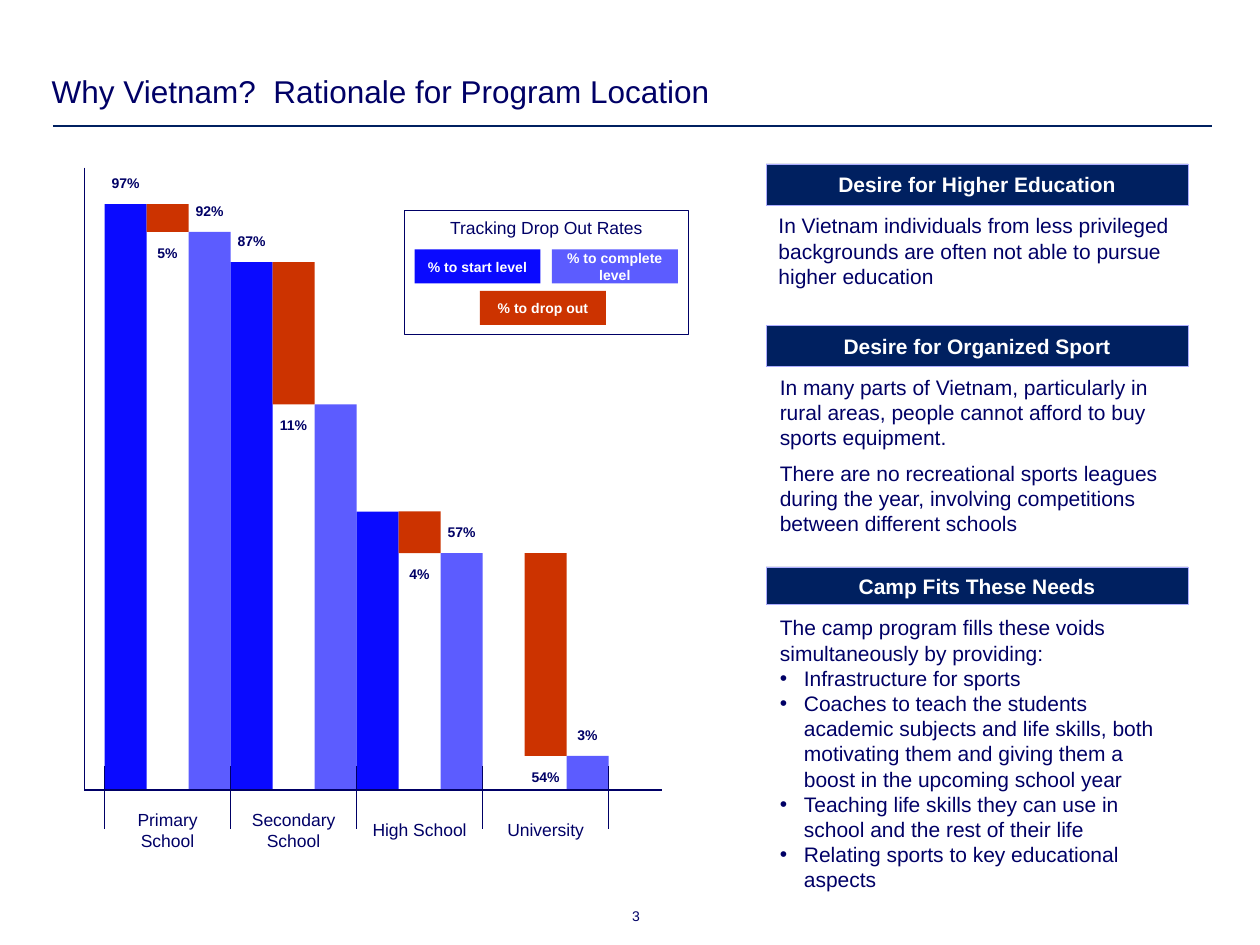
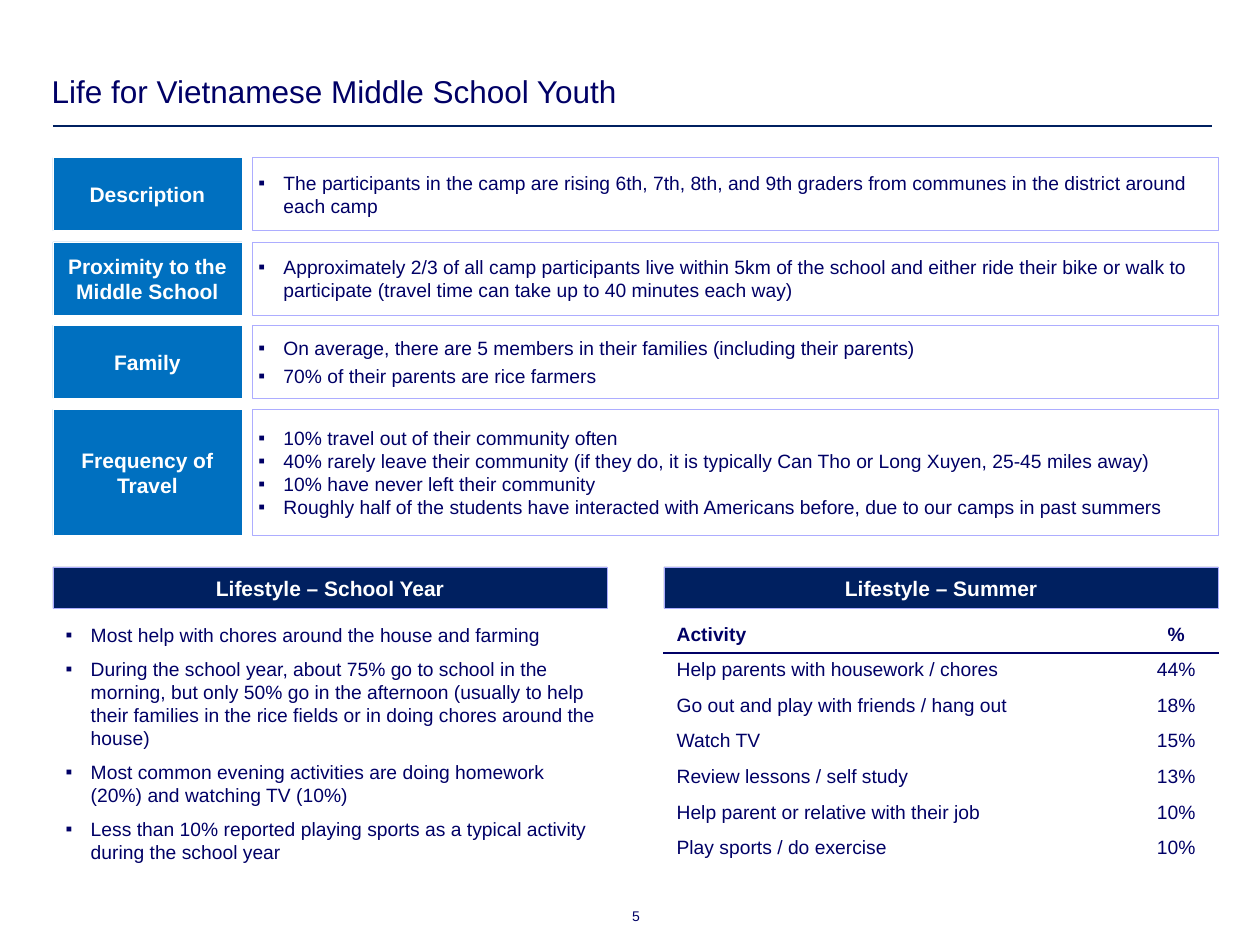
from dataclasses import dataclass, replace
from typing import NamedTuple, Optional

import lxml.etree
import pptx
import pptx.chart.data
import pptx.dml.color
import pptx.enum.shapes
import pptx.enum.text
import pptx.oxml.ns
import pptx.shapes.autoshape
import pptx.shapes.base
import pptx.slide
import pptx.table
import pptx.text.text
import pptx.util

Inches = pptx.util.Inches
Pt = pptx.util.Pt
Align = pptx.enum.text.PP_ALIGN
Anchor = pptx.enum.text.MSO_ANCHOR
qn = pptx.oxml.ns.qn


@dataclass(frozen=True)
class Theme:
    font: str = "Arial"
    ink: str = "000066"
    white: str = "FFFFFF"
    band: str = "002060"
    label: str = "0070C0"
    outline: str = "ADADFF"
    start: str = "0A0AFF"
    complete: str = "5C5CFF"
    drop: str = "CC3300"
    title_size: int = 18
    heading_size: int = 12
    list_size: int = 11
    axis_size: int = 10
    small_size: int = 8


THEME = Theme()


class Box(NamedTuple):
    left: float
    top: float
    width: float
    height: float

    def lengths(self) -> tuple:
        return tuple(Inches(value) for value in self)


@dataclass(frozen=True)
class TextStyle:
    size: int
    color: str = THEME.ink
    bold: bool = False
    align: Align = Align.LEFT
    anchor: Anchor = Anchor.TOP
    inset: tuple = (0.1, 0.05)
    space_before: float = 0
    line_spacing: float = 1.0
    bullet: Optional[str] = None
    indent: float = 0.2
    intro_lines: int = 0  # leading paragraphs without a bullet


TITLE = TextStyle(THEME.title_size, anchor=Anchor.BOTTOM, inset=(0.05, 0.05), line_spacing=0.95)
PAGE_NUMBER = TextStyle(THEME.small_size, align=Align.RIGHT, inset=(0, 0), line_spacing=0.95)
HEADING = TextStyle(THEME.heading_size, THEME.white, True, Align.CENTER, Anchor.MIDDLE, (0.05, 0.05))
PROSE = TextStyle(THEME.heading_size, space_before=6)
NEEDS = TextStyle(THEME.heading_size, bullet="•", indent=0.19, intro_lines=1)
PANEL = TextStyle(THEME.list_size, anchor=Anchor.MIDDLE, inset=(0.05, 0.05), bullet="▪")
SCHOOL_YEAR = TextStyle(THEME.list_size, bullet="▪", space_before=6)
AXIS_LABEL = replace(HEADING, size=THEME.axis_size, color=THEME.ink, bold=False)
VALUE_LABEL = replace(HEADING, size=THEME.small_size, color=THEME.ink)
KEY = replace(HEADING, size=THEME.small_size)
LEGEND = replace(AXIS_LABEL, anchor=Anchor.TOP)
CELL = TextStyle(THEME.list_size, anchor=Anchor.TOP)


class Stage(NamedTuple):
    """One school level: bar tops in inches and the labels that show."""
    name: str
    start_top: float
    end_top: float
    start_text: str
    drop_text: str
    end_text: str
    has_start_bar: bool = True


class Row(NamedTuple):
    label: str
    top: float
    height: float
    lines: list
    space_before: float


STAGES = [
    Stage("Primary School", 1.62, 1.84, "97%", "5%", "92%"),
    Stage("Secondary School", 2.08, 3.21, "87%", "11%", ""),
    Stage("High School", 4.06, 4.39, "", "4%", "57%"),
    Stage("University", 4.39, 6.0, "", "54%", "3%", has_start_bar=False),
]
ROWS = [
    Row("Description", 1.25, 0.58, [
        "The participants in the camp are rising 6th, 7th, 8th, and 9th graders from communes "
        "in the district around each camp"], 3),
    Row("Proximity to the Middle School", 1.92, 0.58, [
        "Approximately 2/3 of all camp participants live within 5km of the school and either ride "
        "their bike or walk to participate (travel time can take up to 40 minutes each way)"], 3),
    Row("Family", 2.58, 0.58, [
        "On average, there are 5 members in their families (including their parents)",
        "70% of their parents are rice farmers"], 3),
    Row("Frequency of Travel", 3.25, 1, [
        "10% travel out of their community often",
        "40% rarely leave their community (if they do, it is typically Can Tho or Long Xuyen, "
        "25-45 miles away)",
        "10% have never left their community",
        "Roughly half of the students have interacted with Americans before, due to our camps "
        "in past summers"], 0),
]
ACTIVITIES = [
    ("Activity", "%"),
    ("Help parents with housework / chores", "44%"),
    ("Go out and play with friends / hang out", "18%"),
    ("Watch TV", "15%"),
    ("Review lessons / self study", "13%"),
    ("Help parent or relative with their job", "10%"),
    ("Play sports / do exercise", "10%"),
]


def rgb(color: str) -> pptx.dml.color.RGBColor:
    return pptx.dml.color.RGBColor.from_string(color)


def set_bullet(paragraph: pptx.text.text._Paragraph, bullet: Optional[str], indent: float) -> None:
    properties = paragraph._p.get_or_add_pPr()
    hanging = Inches(indent) if bullet else 0
    properties.set("marL", str(hanging))
    properties.set("indent", str(-hanging))
    if bullet:
        lxml.etree.SubElement(properties, qn("a:buFont"), typeface=THEME.font)
        lxml.etree.SubElement(properties, qn("a:buChar"), char=bullet)
    else:
        lxml.etree.SubElement(properties, qn("a:buNone"))


def format_paragraphs(text_frame: pptx.text.text.TextFrame, style: TextStyle) -> None:
    for index, paragraph in enumerate(text_frame.paragraphs):
        set_bullet(paragraph, style.bullet if index >= style.intro_lines else None, style.indent)
        paragraph.alignment = style.align
        paragraph.line_spacing = style.line_spacing
        paragraph.space_before = Pt(style.space_before if index else 0)
        for run in paragraph.runs:
            run.font.name = THEME.font
            run.font.size = Pt(style.size)
            run.font.bold = style.bold
            run.font.color.rgb = rgb(style.color)


def write(shape: pptx.shapes.base.BaseShape, lines: list, style: TextStyle) -> None:
    text_frame = shape.text_frame
    text_frame.text = "\n".join(lines)
    text_frame.word_wrap = True
    text_frame.auto_size = pptx.enum.text.MSO_AUTO_SIZE.NONE
    text_frame.vertical_anchor = style.anchor
    text_frame.margin_left = text_frame.margin_right = Inches(style.inset[0])
    text_frame.margin_top = text_frame.margin_bottom = Inches(style.inset[1])
    format_paragraphs(text_frame, style)


def add_text(slide: pptx.slide.Slide, box: Box, lines: list, style: TextStyle) -> None:
    write(slide.shapes.add_textbox(*box.lengths()), lines, style)


def fill_placeholder(shape: pptx.shapes.base.BaseShape, box: Box, lines: list, style: TextStyle) -> None:
    shape.left, shape.top, shape.width, shape.height = box.lengths()
    write(shape, lines, style)


def add_rectangle(slide: pptx.slide.Slide, box: Box, fill: Optional[str] = None,
                  outline: Optional[str] = None, lines: Optional[list] = None,
                  style: TextStyle = HEADING) -> None:
    shape = slide.shapes.add_shape(pptx.enum.shapes.MSO_SHAPE.RECTANGLE, *box.lengths())
    shape.shadow.inherit = False
    if fill:
        shape.fill.solid()
        shape.fill.fore_color.rgb = rgb(fill)
    else:
        shape.fill.background()
    if outline:
        shape.line.color.rgb = rgb(outline)
        shape.line.width = Pt(0.25)
    else:
        shape.line.fill.background()
    if lines:
        write(shape, lines, style)


def add_band(slide: pptx.slide.Slide, box: Box, heading: str) -> None:
    add_rectangle(slide, box, THEME.band, THEME.outline, [heading])


def add_line(slide: pptx.slide.Slide, start: tuple, end: tuple,
             color: str = THEME.ink, width: float = 1) -> None:
    points = [Inches(value) for value in (*start, *end)]
    connector = slide.shapes.add_connector(pptx.enum.shapes.MSO_CONNECTOR.STRAIGHT, *points)
    connector.line.color.rgb = rgb(color)
    connector.line.width = Pt(width)
    lxml.etree.SubElement(connector._element.spPr, qn("a:effectLst"))


def add_base_slide(presentation: pptx.presentation.Presentation, title: str, number: int) -> pptx.slide.Slide:
    """Add a slide with the shared title, rule and page number."""
    slide = presentation.slides.add_slide(presentation.slide_layouts[1])
    fill_placeholder(slide.shapes.title, Box(0.36, 0.54, 8.63, 0.39), [title], TITLE)
    add_line(slide, (0.42, 1), (9.62, 1), THEME.band, 1.5)
    add_text(slide, Box(4.08, 7.21, 1, 0.13), [str(number)], PAGE_NUMBER)
    return slide


def add_dropout_diagram(slide: pptx.slide.Slide) -> None:
    first_left, baseline, bar, label_height = 0.83, 6.27, 1 / 3, 0.33
    for index, stage in enumerate(STAGES):
        start_left = first_left + index
        drop_left, end_left = start_left + bar, start_left + 2 * bar
        if stage.has_start_bar:
            add_rectangle(slide, Box(start_left, stage.start_top, bar, baseline - stage.start_top), THEME.start)
        add_rectangle(slide, Box(drop_left, stage.start_top, bar, stage.end_top - stage.start_top), THEME.drop)
        add_rectangle(slide, Box(end_left, stage.end_top, bar, baseline - stage.end_top), THEME.complete)
        for text, left, top in (
            (stage.start_text, start_left, stage.start_top - label_height),
            (stage.drop_text, drop_left, stage.end_top),
            (stage.end_text, end_left, stage.end_top - label_height),
        ):
            if text:
                add_text(slide, Box(left, top, bar, label_height), [text], VALUE_LABEL)
        add_text(slide, Box(start_left, 6.25, 1, 0.67), [stage.name], AXIS_LABEL)

    add_line(slide, (0.67, 1.33), (0.67, baseline))
    add_line(slide, (5.25, baseline), (0.67, baseline))
    for index in range(len(STAGES) + 1):
        add_line(slide, (first_left + index, 6.08), (first_left + index, 6.58))

    add_rectangle(slide, Box(3.21, 1.67, 2.25, 0.98), None, THEME.ink, ["Tracking Drop Out Rates"], LEGEND)
    for left, top, color, text in (
        (3.29, 1.98, THEME.start, "% to start level"),
        (4.38, 1.98, THEME.complete, "% to complete level"),
        (3.81, 2.31, THEME.drop, "% to drop out"),
    ):
        add_rectangle(slide, Box(left, top, 1, 0.27), color, None, [text], KEY)


def set_cell_borders(cell: pptx.table._Cell, top: str, bottom: str) -> None:
    properties = cell._tc.get_or_add_tcPr()
    for side, color in (("L", THEME.white), ("R", THEME.white), ("T", top), ("B", bottom)):
        border = lxml.etree.SubElement(properties, qn(f"a:ln{side}"), w=str(Pt(1)))
        solid = lxml.etree.SubElement(border, qn("a:solidFill"))
        lxml.etree.SubElement(solid, qn("a:srgbClr"), val=color)


def add_activity_table(slide: pptx.slide.Slide, box: Box) -> None:
    table = slide.shapes.add_table(len(ACTIVITIES), 2, *box.lengths()).table
    table.horz_banding = False
    table.columns[0].width, table.columns[1].width = Inches(3.73), Inches(0.67)
    for row, values in enumerate(ACTIVITIES):
        for column, value in enumerate(values):
            cell = table.cell(row, column)
            set_cell_borders(cell, THEME.ink if row == 1 else THEME.white,
                             THEME.ink if row == 0 else THEME.white)
            cell.fill.solid()
            cell.fill.fore_color.rgb = rgb(THEME.white)
            cell.text_frame.text = value
            align = Align.CENTER if column else Align.LEFT
            format_paragraphs(cell.text_frame, replace(CELL, bold=row == 0, align=align))


def build_rationale(presentation: pptx.presentation.Presentation) -> None:
    slide = add_base_slide(presentation, "Why Vietnam?  Rationale for Program Location", 3)
    for top, height, heading in (
        (1.3, 0.33, "Desire for Higher Education"),
        (2.58, 0.33, "Desire for Organized Sport"),
        (4.5, 0.3, "Camp Fits These Needs"),
    ):
        add_band(slide, Box(6.08, top, 3.35, height), heading)
    add_text(slide, Box(6.08, 1.64, 3.35, 0.71), [
        "In Vietnam individuals from less privileged backgrounds are often not able to pursue "
        "higher education"], PROSE)
    add_text(slide, Box(6.09, 2.92, 3.35, 1.4), [
        "In many parts of Vietnam, particularly in rural areas, people cannot afford to buy "
        "sports equipment.",
        "There are no recreational sports leagues during the year, involving competitions "
        "between different schools"], PROSE)
    fill_placeholder(slide.placeholders[1], Box(6.09, 4.83, 3.35, 2.32), [
        "The camp program fills these voids simultaneously by providing:",
        "Infrastructure for sports",
        "Coaches to teach the students academic subjects and life skills, both motivating them "
        "and giving them a boost in the upcoming school year",
        "Teaching life skills they can use in school and the rest of their life",
        "Relating sports to key educational aspects"], NEEDS)
    add_dropout_diagram(slide)


def build_student_life(presentation: pptx.presentation.Presentation) -> None:
    slide = add_base_slide(presentation, "Life for Vietnamese Middle School Youth", 5)
    for row in ROWS:
        add_rectangle(slide, Box(0.42, row.top, 1.5, row.height), THEME.label, THEME.white, [row.label])
        add_rectangle(slide, Box(2, row.top, 7.67, row.height), None, THEME.outline, row.lines,
                      replace(PANEL, space_before=row.space_before))
    for left, heading in ((0.42, "Lifestyle – School Year"), (5.27, "Lifestyle – Summer")):
        add_band(slide, Box(left, 4.5, 4.4, 0.33), heading)
    fill_placeholder(slide.placeholders[1], Box(0.42, 4.9, 4.42, 2.29), [
        "Most help with chores around the house and farming",
        "During the school year, about 75% go to school in the morning, but only 50% go in the "
        "afternoon (usually to help their families in the rice fields or in doing chores around the house)",
        "Most common evening activities are doing homework (20%) and watching TV (10%)",
        "Less than 10% reported playing sports as a typical activity during the school year"], SCHOOL_YEAR)
    add_activity_table(slide, Box(5.27, 4.9, 4.4, 1.98))


def main() -> None:
    presentation = pptx.Presentation()
    presentation.slide_width, presentation.slide_height = Inches(10), Inches(7.5)
    build_rationale(presentation)
    build_student_life(presentation)
    presentation.save("out.pptx")


if __name__ == "__main__":
    main()
